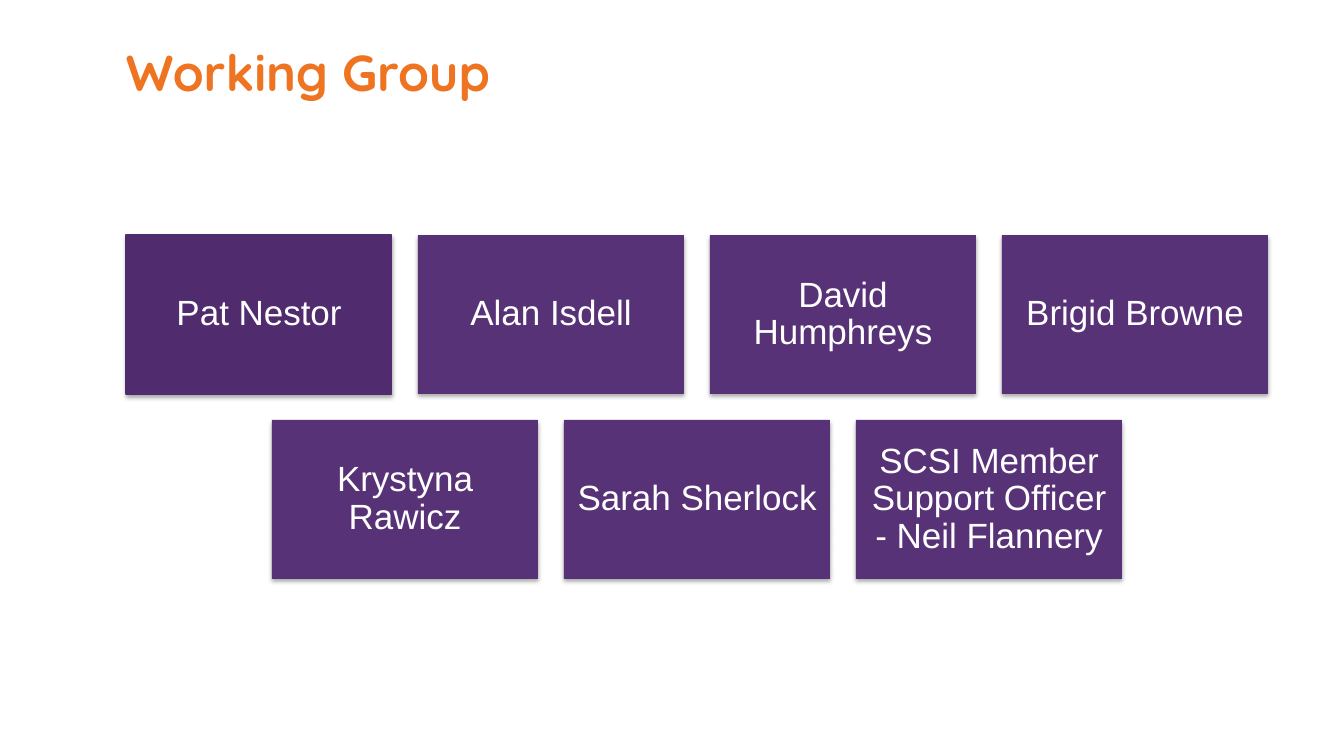
from dataclasses import dataclass

from lxml.etree import SubElement
from pptx import Presentation
from pptx.dml.color import RGBColor
from pptx.enum.shapes import MSO_SHAPE
from pptx.enum.text import MSO_ANCHOR, MSO_AUTO_SIZE, PP_ALIGN
from pptx.oxml.ns import qn
from pptx.shapes.autoshape import Shape
from pptx.slide import Slide
from pptx.text.text import TextFrame
from pptx.util import Emu, Pt

ORANGE = RGBColor(0xEE, 0x74, 0x21)
PURPLE = RGBColor(0x58, 0x32, 0x77)
DARK = RGBColor(0x50, 0x2B, 0x6E)
EDGE = RGBColor(0x4F, 0x2C, 0x6D)
WHITE = RGBColor(0xFF, 0xFF, 0xFF)

SCALE = 914400 / 100.8  # EMU in one px
WIDE, HIGH = 266, 159
GAP = 26
LEFT, TOP = 126, 235
COLS = 4


@dataclass
class Card:
    name: str
    first: bool = False


ROWS = [
    [Card("Pat Nestor", True), Card("Alan Isdell"),
     Card("David Humphreys"), Card("Brigid Browne")],
    [Card("Krystyna Rawicz"), Card("Sarah Sherlock"),
     Card("SCSI Member Support Officer - Neil Flannery")],
]


def px(count: float) -> Emu:
    return Emu(round(count * SCALE))


def set_frame(frame: TextFrame, inset: int) -> None:
    frame.word_wrap = True
    frame.auto_size = MSO_AUTO_SIZE.NONE
    frame.vertical_anchor = MSO_ANCHOR.MIDDLE
    frame.margin_left = frame.margin_right = px(inset)
    frame.margin_top = frame.margin_bottom = px(inset)


def add_shadow(shape: Shape) -> None:
    shape.shadow.inherit = False
    effects = shape.element.spPr.find(qn("a:effectLst"))
    outer = SubElement(effects, qn("a:outerShdw"), blurRad="40000",
                       dist="23000", dir="5400000", rotWithShape="0")
    color = SubElement(outer, qn("a:srgbClr"), val="000000")
    SubElement(color, qn("a:alpha"), val="35000")


def add_title(slide: Slide) -> None:
    title = slide.shapes.title
    title.left, title.top = px(LEFT), px(0)
    title.width, title.height = px(1140), px(143)
    frame = title.text_frame
    set_frame(frame, 0)
    frame.text = "Working Group"
    para = frame.paragraphs[0]
    para.alignment = PP_ALIGN.LEFT
    para.font.name, para.font.size = "Quicksand", Pt(36)
    para.font.bold = True
    para.font.color.rgb = ORANGE


def add_card(slide: Slide, card: Card, left: float, top: int) -> None:
    shape = slide.shapes.add_shape(MSO_SHAPE.RECTANGLE, px(left), px(top),
                                   px(WIDE), px(HIGH))
    add_shadow(shape)
    shape.fill.solid()
    shape.fill.fore_color.rgb = DARK if card.first else PURPLE
    if card.first:
        shape.line.color.rgb = EDGE
        shape.line.width = Pt(0.75)
    else:
        shape.line.fill.background()
    frame = shape.text_frame
    set_frame(frame, 10)
    frame.text = card.name
    para = frame.paragraphs[0]
    para.alignment = PP_ALIGN.CENTER
    para.line_spacing = 0.9
    para.font.name, para.font.size = "Arial", Pt(25)
    para.font.color.rgb = WHITE


def main() -> None:
    deck = Presentation()
    deck.slide_width, deck.slide_height = px(1344), px(756)
    slide = deck.slides.add_slide(deck.slide_layouts[5])
    add_title(slide)

    # Rows of members, each centred under the full first row
    for row, cards in enumerate(ROWS):
        start = LEFT + (COLS - len(cards)) * (WIDE + GAP) / 2
        for col, card in enumerate(cards):
            add_card(slide, card, start + col * (WIDE + GAP),
                     TOP + row * (HIGH + GAP))

    deck.save("out.pptx")


if __name__ == "__main__":
    main()
